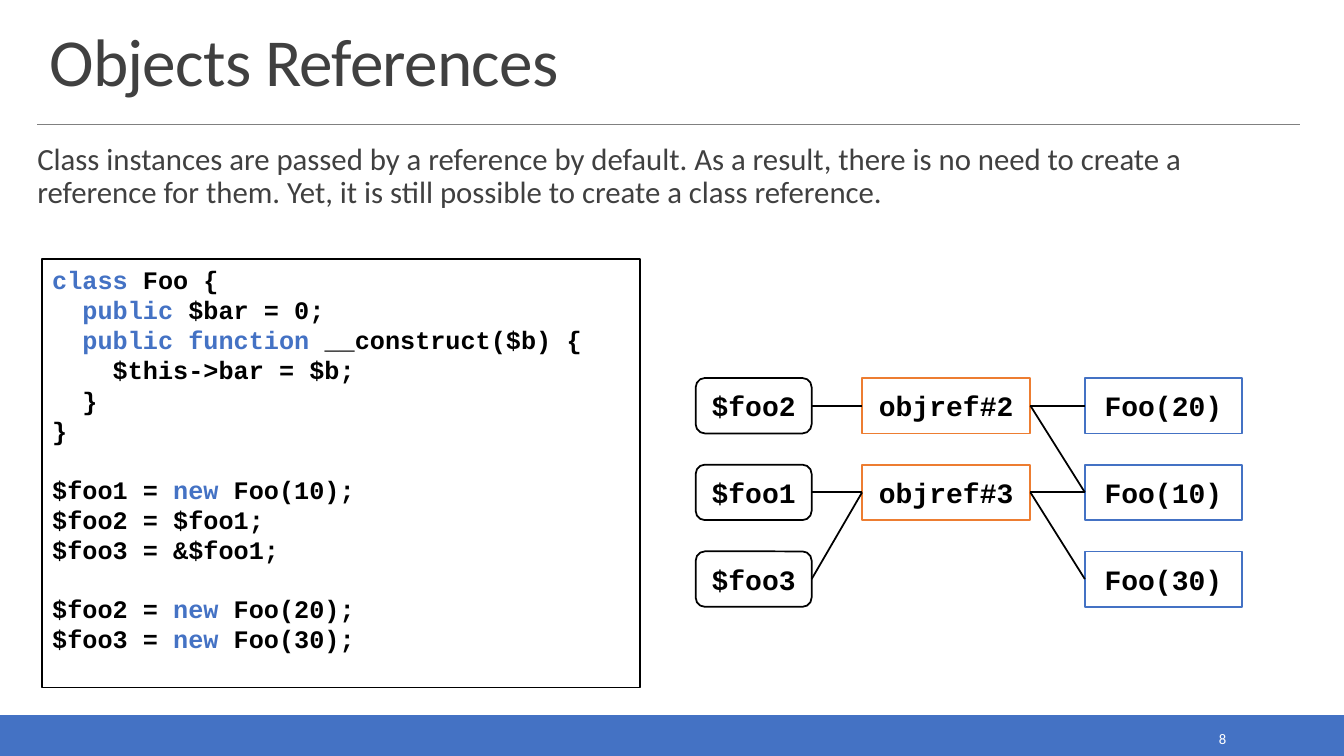
from lxml.etree import SubElement
from pptx import Presentation
from pptx.dml.color import RGBColor
from pptx.enum.shapes import MSO_CONNECTOR, MSO_SHAPE
from pptx.enum.text import MSO_ANCHOR as ANCHOR, PP_ALIGN as ALIGN
from pptx.oxml.ns import qn
from pptx.util import Inches, Pt

BLACK = RGBColor(0x00, 0x00, 0x00)
WHITE = RGBColor(0xFF, 0xFF, 0xFF)
BLUE = RGBColor(0x44, 0x72, 0xC4)
ORANGE = RGBColor(0xED, 0x7D, 0x31)
GRAY = RGBColor(0x80, 0x80, 0x80)
DARK = RGBColor(0x40, 0x40, 0x40)

WIDTH, HEIGHT = 13.33, 7.5
LEFT, CONTENT_W = 0.37, 12.52
FOOTER_H = 0.4
LINE_W = 1.25
INDENT = 0.3
CODE_PITCH = 20.4

CODE = [
    (0, 0, "|class| Foo {"),
    (1, 0, "|public| $bar = 0;"),
    (1, 0, "|public function| __construct($b) {"),
    (2, 0, "$this->bar = $b;"),
    (1, 0, "}"),
    (0, 0, "}"),
    (0, 1, "$foo1 = |new| Foo(10);"),
    (0, 0, "$foo2 = $foo1;"),
    (0, 0, "$foo3 = &$foo1;"),
    (0, 1, "$foo2 = |new| Foo(20);"),
    (0, 0, "$foo3 = |new| Foo(30);"),
]
COLUMNS = [
    (0, 1.15, MSO_SHAPE.ROUNDED_RECTANGLE, BLACK, ["$foo2", "$foo1", "$foo3"]),
    (1.65, 1.67, MSO_SHAPE.RECTANGLE, ORANGE, ["objref#2", "objref#3"]),
    (3.86, 1.56, MSO_SHAPE.RECTANGLE, BLUE, ["Foo(20)", "Foo(10)", "Foo(30)"]),
]
LINKS = [
    ("$foo2", "objref#2"), ("$foo1", "objref#3"), ("$foo3", "objref#3"),
    ("objref#2", "Foo(20)"), ("objref#2", "Foo(10)"),
    ("objref#3", "Foo(10)"), ("objref#3", "Foo(30)"),
]


def apply(obj, formats):
    for name, value in formats.items():
        setattr(obj, name, value)


def add_run(p, text, color, **font):
    r = p.add_run()
    r.text = text
    apply(r.font, font)
    r.font.color.rgb = color
    return r


def add_text(slide, box, frame):
    tf = slide.shapes.add_textbox(*map(Inches, box)).text_frame
    apply(tf, {"word_wrap": True, **frame})
    return tf.paragraphs[0]


def add_box(slide, kind, box, fill, line):
    sp = slide.shapes.add_shape(kind, *map(Inches, box))
    sp.shadow.inherit = False
    if fill is None:
        sp.fill.background()
    else:
        sp.fill.solid()
        sp.fill.fore_color.rgb = fill
    sp.line.color.rgb = line
    sp.line.width = Pt(LINE_W)
    return sp


def add_line(slide, ends, color, width):
    line = slide.shapes.add_connector(MSO_CONNECTOR.STRAIGHT, *map(Inches, ends))
    line.line.color.rgb = color
    line.line.width = Pt(width)
    SubElement(line._element.spPr, qn("a:effectLst"))
    return line


def add_header(slide, x, y, w):
    p = add_text(slide, (x + 0.02, y, w, 0.84), {"vertical_anchor": ANCHOR.BOTTOM})
    p.line_spacing = 0.85
    r = add_run(p, "Objects References", DARK, size=Pt(48), name="Calibri")
    r.font._element.set("spc", "-50")
    add_line(slide, (x, y + 1.03, x + w, y + 1.03), GRAY, 0.5)


def add_body(slide, x, y, w, h):
    p = add_text(slide, (x, y, w, h), {
        "margin_left": 0, "margin_right": 0,
        "margin_top": Inches(0.04), "margin_bottom": Inches(0.04)})
    apply(p, {"line_spacing": 0.9, "space_before": Pt(12), "space_after": Pt(2)})
    add_run(p, "Class instances are passed by a reference by default. As a result, "
               "there is no need to create a reference for them. Yet, it is still "
               "possible to create a class reference.",
            DARK, size=Pt(22), name="Calibri")


def add_code(slide, x, y, w, h):
    tf = add_box(slide, MSO_SHAPE.RECTANGLE, (x, y, w, h), None, BLACK).text_frame
    apply(tf, {"word_wrap": True, "vertical_anchor": ANCHOR.TOP})
    for i, (level, gap, line) in enumerate(CODE):
        p = tf.add_paragraph() if i else tf.paragraphs[0]
        apply(p, {"alignment": ALIGN.LEFT, "space_before": Pt(gap * CODE_PITCH)})
        p._p.get_or_add_pPr().set("marL", str(Inches(level * INDENT)))
        for j, part in enumerate(line.split("|")):
            if part:
                add_run(p, part, BLUE if j % 2 else BLACK,
                        size=Pt(18), name="Courier New", bold=True)


def add_diagram(slide, x, y, pitch, box_h):
    nodes = {}
    for dx, w, kind, color, labels in COLUMNS:
        for row, label in enumerate(labels):
            sp = add_box(slide, kind, (x + dx, y + row * pitch, w, box_h), WHITE, color)
            apply(sp.text_frame, {"word_wrap": False, "vertical_anchor": ANCHOR.MIDDLE})
            p = sp.text_frame.paragraphs[0]
            p.alignment = ALIGN.CENTER
            add_run(p, label, BLACK, size=Pt(20), name="Courier New", bold=True)
            nodes[label] = sp
    for start, end in LINKS:
        link = add_line(slide, (0, 0, 0, 0), BLACK, LINE_W)
        link.begin_connect(nodes[start], 3)
        link.end_connect(nodes[end], 1)


def add_footer(slide, x, y, w, h):
    add_box(slide, MSO_SHAPE.RECTANGLE, (x, y, w, h), BLUE, BLUE)
    p = add_text(slide, (x + 10.83, y + 0.09, 1.43, 0.28),
                 {"vertical_anchor": ANCHOR.MIDDLE})
    p.alignment = ALIGN.RIGHT
    add_run(p, "8", WHITE, size=Pt(10.5), name="Calibri")


def main():
    prs = Presentation()
    apply(prs, {"slide_width": Inches(WIDTH), "slide_height": Inches(HEIGHT)})
    slide = prs.slides.add_slide(prs.slide_layouts[6])
    add_footer(slide, 0, HEIGHT - FOOTER_H, WIDTH, FOOTER_H)
    add_header(slide, LEFT, 0.2, CONTENT_W)
    add_body(slide, LEFT, 1.39, CONTENT_W, 0.9)
    add_code(slide, 0.42, 2.57, 5.93, 4.25)
    add_diagram(slide, 6.9, 3.75, 0.86, 0.55)
    prs.save("out.pptx")


if __name__ == "__main__":
    main()
